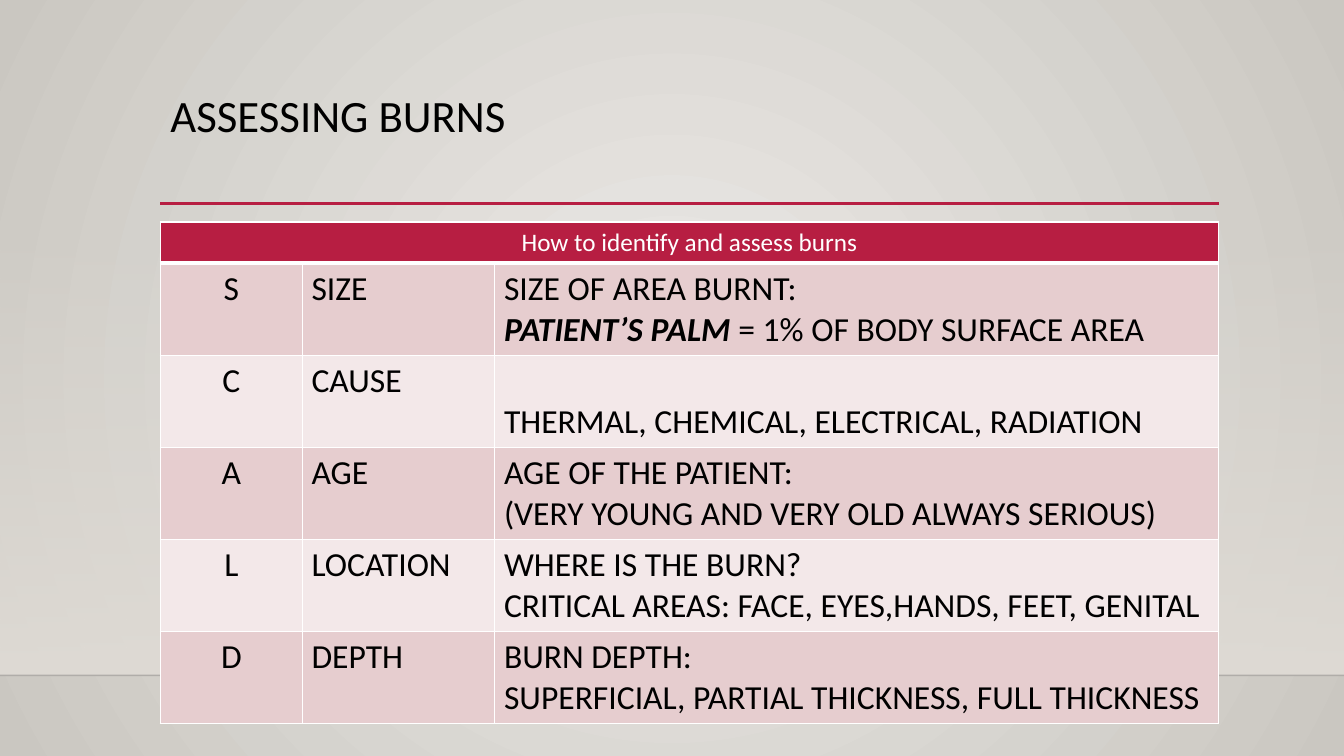
from dataclasses import dataclass

from lxml import etree
from pptx import Presentation
from pptx.dml.color import RGBColor
from pptx.enum.shapes import MSO_CONNECTOR, MSO_SHAPE
from pptx.enum.text import MSO_ANCHOR, MSO_AUTO_SIZE, PP_ALIGN
from pptx.oxml.ns import qn
from pptx.util import Pt

LEFT, CENTER = PP_ALIGN.LEFT, PP_ALIGN.CENTER
TOP, MIDDLE, BOTTOM = MSO_ANCHOR.TOP, MSO_ANCHOR.MIDDLE, MSO_ANCHOR.BOTTOM
RECT, STRAIGHT = MSO_SHAPE.RECTANGLE, MSO_CONNECTOR.STRAIGHT


@dataclass(frozen=True)
class Theme:
    font: str = "Calibri"
    text: str = "000000"
    white: str = "FFFFFF"
    accent: str = "B71E42"
    bands: tuple = ("E6CDCF", "F3E8E9")
    back: tuple = ("ECEAE7", "CAC7C1")
    wall: str = "DFDBD5"
    floor_line: str = "000001"
    title_size: int = 32
    head_size: int = 18
    body_size: int = 24


T = Theme()
SLIDE_W, SLIDE_H = 960, 540
FLOOR_Y = 482.4
COLS = (101.5, 137.5, 517)
HEAD_H, ROW_H = 29.5, 65.7
HEADING = "How to identify and assess burns"

# Letter, topic, lines of explanation; a line is a list of (text, emphasised)
ROWS = [
    ("S", "SIZE", [[("SIZE OF AREA BURNT:", False)],
                   [("PATIENT’S PALM ", True), ("= 1% OF BODY SURFACE AREA", False)]]),
    ("C", "CAUSE", [[("THERMAL, CHEMICAL, ELECTRICAL, RADIATION", False)]]),
    ("A", "AGE", [[("AGE OF THE PATIENT:", False)],
                  [("(VERY YOUNG AND VERY OLD ALWAYS SERIOUS)", False)]]),
    ("L", "LOCATION", [[("WHERE IS THE BURN?", False)],
                       [("CRITICAL AREAS: FACE, EYES,HANDS, FEET, GENITAL", False)]]),
    ("D", "DEPTH", [[("BURN DEPTH:", False)],
                    [("SUPERFICIAL, PARTIAL THICKNESS, FULL THICKNESS", False)]]),
]


def rgb(value):
    return RGBColor.from_string(value)


def set_alpha(color, percent):
    etree.SubElement(color, qn("a:alpha"), val=str(percent * 1000))


def write(tf, lines, size=T.body_size, color=T.text, align=LEFT, spacing=1.0):
    """Fill a text frame; each line is a string or a list of (text, emphasised)."""
    tf.word_wrap = True
    for i, line in enumerate(lines):
        p = tf.paragraphs[0] if i == 0 else tf.add_paragraph()
        p.alignment, p.line_spacing = align, spacing
        for text, strong in [(line, False)] if isinstance(line, str) else line:
            r = p.add_run()
            r.text = text
            r.font.name, r.font.size = T.font, Pt(size)
            r.font.bold = r.font.italic = strong
            r.font.color.rgb = rgb(color)


def set_gradient(fill, element, colors):
    """Apply a two-stop gradient and return its XML element."""
    fill.gradient()
    for stop, position, color in zip(fill.gradient_stops, (0, 1), colors):
        stop.position, stop.color.rgb = position, rgb(color)
    return next(element.iter(qn("a:gradFill")))


def add_line(slide, x, y, w, color, width):
    line = slide.shapes.add_connector(STRAIGHT, Pt(x), Pt(y), Pt(x + w), Pt(y))
    line.line.color.rgb, line.line.width = rgb(color), Pt(width)
    etree.SubElement(line.element.spPr, qn("a:effectLst"))
    return line


def add_backdrop(slide, w, h):
    # Radial background
    grad = set_gradient(slide.background.fill, slide.element, T.back)
    grad.remove(grad.find(qn("a:lin")))
    path = etree.SubElement(grad, qn("a:path"), path="circle")
    etree.SubElement(path, qn("a:fillToRect"), l="50000", t="50000", r="50000", b="50000")

    # Wall fading in towards the floor
    wall_y = 159
    sp = slide.shapes.add_shape(RECT, 0, Pt(wall_y), Pt(w), Pt(FLOOR_Y - wall_y))
    sp.shadow.inherit = False
    sp.line.fill.background()
    grad = set_gradient(sp.fill, sp.element, (T.wall, T.wall))
    grad.find(qn("a:lin")).set("ang", "5400000")
    set_alpha(next(grad.iter(qn("a:srgbClr"))), 0)

    # Floor line
    line = add_line(slide, 0, FLOOR_Y, w, T.floor_line, 1)
    set_alpha(next(line.element.spPr.iter(qn("a:srgbClr"))), 20)


def add_title(slide, x, y, w, h, text):
    title = slide.shapes.title
    title.left, title.top, title.width, title.height = Pt(x), Pt(y), Pt(w), Pt(h)
    tf = title.text_frame
    tf.auto_size, tf.vertical_anchor = MSO_AUTO_SIZE.NONE, TOP
    write(tf, [text], size=T.title_size, spacing=0.9)
    add_line(slide, x, y + h - 0.5, w, T.accent, 2.5)


def set_borders(cell, top=1, bottom=1):
    tc_pr = cell._tc.get_or_add_tcPr()
    for i, (side, width) in enumerate((("L", 1), ("R", 1), ("T", top), ("B", bottom))):
        ln = etree.Element(qn(f"a:ln{side}"), w=str(Pt(width)))
        fill = etree.SubElement(ln, qn("a:solidFill"))
        etree.SubElement(fill, qn("a:srgbClr"), val=T.white)
        tc_pr.insert(i, ln)


def format_cell(cell, color, **borders):
    cell.fill.solid()
    cell.fill.fore_color.rgb = rgb(color)
    cell.margin_left = cell.margin_right = Pt(6.6)
    cell.margin_top = cell.margin_bottom = Pt(3.6)
    set_borders(cell, **borders)


def add_burns_table(slide, x, y, w):
    h = HEAD_H + ROW_H * len(ROWS)
    table = slide.shapes.add_table(len(ROWS) + 1, len(COLS), Pt(x), Pt(y), Pt(w), Pt(h)).table
    table.first_row = table.horz_banding = False
    for column, width in zip(table.columns, COLS):
        column.width = Pt(width)
    for i, row in enumerate(table.rows):
        row.height = Pt(ROW_H if i else HEAD_H)

    # Heading across all columns
    head = table.cell(0, 0)
    head.merge(table.cell(0, len(COLS) - 1))
    for cell in table.rows[0].cells:
        format_cell(cell, T.accent, bottom=3)
    write(head.text_frame, [HEADING], size=T.head_size, color=T.white, align=CENTER)

    # One banded row per letter
    for i, (letter, topic, lines) in enumerate(ROWS):
        cells = list(table.rows[i + 1].cells)
        for cell in cells:
            format_cell(cell, T.bands[i % 2], top=1 if i else 3)
        write(cells[0].text_frame, [letter], align=CENTER)
        write(cells[1].text_frame, [topic])
        write(cells[2].text_frame, lines)
        if len(lines) == 1:
            cells[2].vertical_anchor = BOTTOM


def main():
    prs = Presentation()
    prs.slide_width, prs.slide_height = Pt(SLIDE_W), Pt(SLIDE_H)
    slide = prs.slides.add_slide(prs.slide_layouts[5])
    x, w = 114.5, sum(COLS)
    add_backdrop(slide, SLIDE_W, SLIDE_H)
    add_title(slide, x, 63.4, w, 82.6, "ASSESSING BURNS")
    add_burns_table(slide, x, 158.6, w)
    prs.save("out.pptx")


if __name__ == "__main__":
    main()
